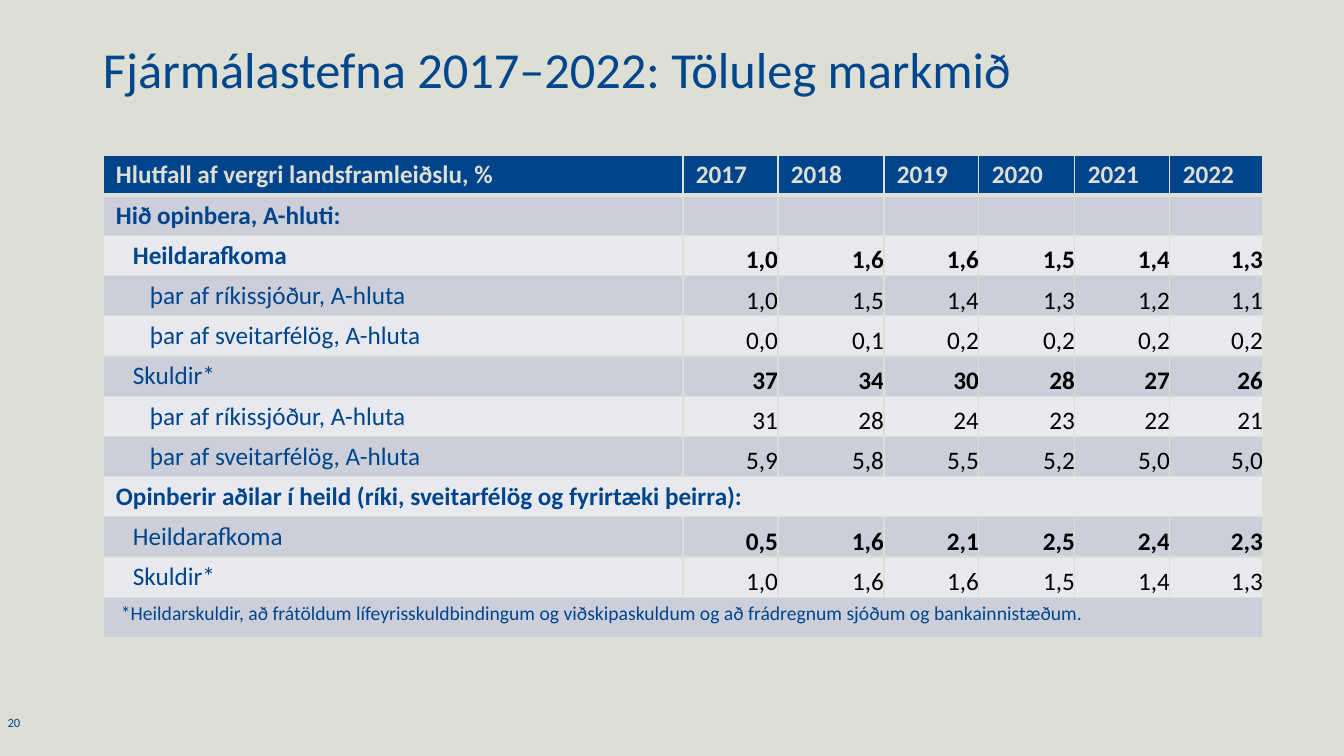
from dataclasses import dataclass

from lxml.etree import SubElement
from pptx import Presentation
from pptx.dml.color import RGBColor
from pptx.enum.text import MSO_ANCHOR as Anchor, PP_ALIGN as Align
from pptx.oxml import parse_xml
from pptx.oxml.ns import nsdecls, qn
from pptx.util import Emu, Pt

EMU_PER_PX = 12192000 / 1344


@dataclass(frozen=True)
class Theme:
    font: str = "Calibri"
    ground: str = "DDDED4"
    title: str = "00468C"
    header: str = "00458B"
    value: str = "000000"
    bands: tuple = ("E7E9EE", "CCCFDA")
    title_size: int = 36
    body_size: int = 18
    note_size: int = 14
    number_size: int = 9


@dataclass(frozen=True)
class Row:
    label: str
    values: tuple = ()
    level: int = 0
    label_bold: bool = False
    values_bold: bool = False


YEARS = ("2017", "2018", "2019", "2020", "2021", "2022")
STATE = "þar af ríkissjóður, A-hluta"
TOWNS = "þar af sveitarfélög, A-hluta"
ROWS = (
    Row("Hið opinbera, A-hluti:", ("",) * 6, label_bold=True),
    Row("Heildarafkoma", ("1,0", "1,6", "1,6", "1,5", "1,4", "1,3"), 1, True, True),
    Row(STATE, ("1,0", "1,5", "1,4", "1,3", "1,2", "1,1"), 2),
    Row(TOWNS, ("0,0", "0,1", "0,2", "0,2", "0,2", "0,2"), 2),
    Row("Skuldir*", ("37", "34", "30", "28", "27", "26"), 1, values_bold=True),
    Row(STATE, ("31", "28", "24", "23", "22", "21"), 2),
    Row(TOWNS, ("5,9", "5,8", "5,5", "5,2", "5,0", "5,0"), 2),
    Row("Opinberir aðilar í heild (ríki, sveitarfélög og fyrirtæki þeirra):", label_bold=True),
    Row("Heildarafkoma", ("0,5", "1,6", "2,1", "2,5", "2,4", "2,3"), 1, values_bold=True),
    Row("Skuldir*", ("1,0", "1,6", "1,6", "1,5", "1,4", "1,3"), 1),
)
NOTE = (
    "*Heildarskuldir, að frátöldum lífeyrisskuldbindingum og viðskipaskuldum "
    "og að frádregnum sjóðum og bankainnistæðum."
)
COLUMNS = (580, 95, 106, 95, 96, 95, 93)
ROW_HEIGHT = 40
LEVEL_INDENT = 17
NOTE_INDENT = 5


def px(length):
    return Emu(round(length * EMU_PER_PX))


def write(frame, text, *, font, size, color, bold=False, align=Align.LEFT, indent=0, spacing=None):
    para = frame.paragraphs[0]
    para.alignment = align
    if spacing:
        para.line_spacing = spacing
    if indent:
        para._p.get_or_add_pPr().set("marL", str(px(indent)))
    span = para.add_run()
    span.text = text
    span.font.name = font
    span.font.size = Pt(size)
    span.font.bold = bold
    span.font.color.rgb = RGBColor.from_string(color)


class Slide:
    def __init__(self, deck, theme):
        self.theme = theme
        self.page = deck.slides.add_slide(deck.slide_layouts[6])
        ground = self.page.background.fill
        ground.solid()
        ground.fore_color.rgb = RGBColor.from_string(theme.ground)

    def text(self, text, left, top, width, height, inset=(0, 0), **style):
        box = self.page.shapes.add_textbox(px(left), px(top), px(width), px(height))
        frame = box.text_frame
        frame.word_wrap = True
        frame.margin_left = frame.margin_right = px(inset[0])
        frame.margin_top = frame.margin_bottom = px(inset[1])
        write(frame, text, font=self.theme.font, **style)

    def table(self, left, top, columns, row_count, row_height):
        frame = self.page.shapes.add_table(
            row_count, len(columns), px(left), px(top), px(sum(columns)), px(row_count * row_height)
        )
        grid = frame.table
        grid.first_row = grid.horz_banding = False
        for column, width in zip(grid.columns, columns):
            column.width = px(width)
        for row in grid.rows:
            row.height = px(row_height)
        return grid

    def paint(self, cell, fill, top_line=1, bottom_line=1):
        cell.fill.solid()
        cell.fill.fore_color.rgb = RGBColor.from_string(fill)
        properties = cell._tc.get_or_add_tcPr()
        sides = (("lnL", 1), ("lnR", 1), ("lnT", top_line), ("lnB", bottom_line))
        for place, (side, points) in enumerate(sides):
            line = parse_xml(f'<a:{side} {nsdecls("a")} w="{Pt(points)}"/>')
            solid = SubElement(line, qn("a:solidFill"))
            SubElement(solid, qn("a:srgbClr"), val=self.theme.ground)
            properties.insert(place, line)

    def cell(self, cell, text, inset=(13, 5), anchor=Anchor.TOP, **style):
        cell.margin_left = cell.margin_right = px(inset[0])
        cell.margin_top = cell.margin_bottom = px(inset[1])
        cell.vertical_anchor = anchor
        if text:
            style = {"size": self.theme.body_size, **style}
            write(cell.text_frame, text, font=self.theme.font, **style)


def fill_targets(slide):
    theme = slide.theme
    last = len(ROWS) + 1
    grid = slide.table(103, 155, COLUMNS, last + 1, ROW_HEIGHT)
    for index in range(last + 1):
        for column in range(len(COLUMNS)):
            slide.paint(
                grid.cell(index, column),
                theme.bands[index % 2] if index else theme.header,
                top_line=3 if index == 1 else 1,
                bottom_line=1 if index else 3,
            )
    for column, heading in enumerate(("Hlutfall af vergri landsframleiðslu, %", *YEARS)):
        slide.cell(grid.cell(0, column), heading, color=theme.ground, bold=True)
    for index, row in enumerate(ROWS, 1):
        label = grid.cell(index, 0)
        if not row.values:
            label.merge(grid.cell(index, len(YEARS)))
        slide.cell(label, row.label, color=theme.header, bold=row.label_bold,
                   indent=row.level * LEVEL_INDENT)
        for column, value in enumerate(row.values, 1):
            slide.cell(grid.cell(index, column), value, inset=(0, 0), anchor=Anchor.BOTTOM,
                       color=theme.value, bold=row.values_bold, align=Align.RIGHT)
    note = grid.cell(last, 0)
    note.merge(grid.cell(last, len(YEARS)))
    slide.cell(note, NOTE, size=theme.note_size, color=theme.header, indent=NOTE_INDENT)


def main():
    deck = Presentation()
    deck.slide_width, deck.slide_height = px(1344), px(756)
    theme = Theme()
    slide = Slide(deck, theme)
    slide.text("20", 0, 715, 28, 26, size=theme.number_size, color=theme.title, align=Align.CENTER)
    slide.text("Fjármálastefna 2017–2022: Töluleg markmið", 93, 40, 1159, 146, inset=(10, 5),
               size=theme.title_size, color=theme.title, spacing=0.9)
    fill_targets(slide)
    deck.save("out.pptx")


if __name__ == "__main__":
    main()
